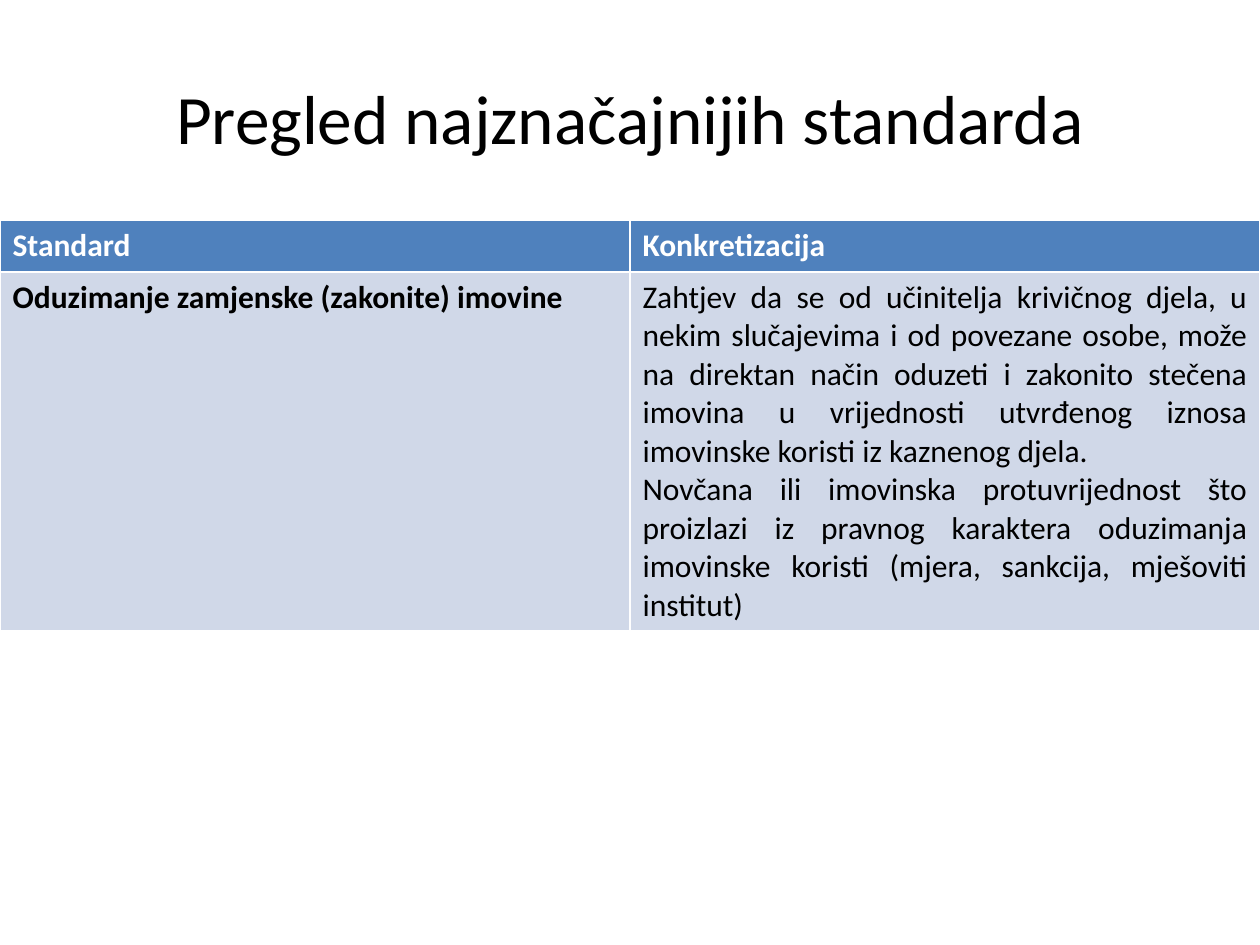
from pptx import Presentation
from pptx.dml.color import RGBColor
from pptx.enum.text import MSO_ANCHOR, PP_ALIGN
from pptx.util import Inches, Pt

FONT = "Calibri"
BLACK, WHITE = "000000", "FFFFFF"
HEADER_FILL, BODY_FILL = "4F81BD", "D0D8E8"

HEADERS = ["Standard", "Konkretizacija"]
STANDARD = "Oduzimanje zamjenske (zakonite) imovine"
DETAILS = [
    "Zahtjev da se od učinitelja krivičnog djela, u nekim slučajevima i od "
    "povezane osobe, može na direktan način oduzeti i zakonito stečena imovina "
    "u vrijednosti utvrđenog iznosa imovinske koristi iz kaznenog djela.",
    "Novčana ili imovinska protuvrijednost što proizlazi iz pravnog karaktera "
    "oduzimanja imovinske koristi (mjera, sankcija, mješoviti institut)",
]


def rgb(color):
    return RGBColor.from_string(color)


def write(tf, paragraphs, size, color, align, bold=False):
    for i, text in enumerate(paragraphs):
        p = tf.paragraphs[0] if i == 0 else tf.add_paragraph()
        p.alignment = align
        r = p.add_run()
        r.text = text
        r.font.name = FONT
        r.font.size = Pt(size)
        r.font.bold = bold
        r.font.color.rgb = rgb(color)


def add_title(s, left, top, width, height):
    sp = s.shapes.title
    sp.left, sp.top = Inches(left), Inches(top)
    sp.width, sp.height = Inches(width), Inches(height)
    tf = sp.text_frame
    tf.vertical_anchor = MSO_ANCHOR.MIDDLE
    write(tf, ["Pregled najznačajnijih standarda"], 39.6, BLACK, PP_ALIGN.CENTER)


def fill_cell(cell, paragraphs, fill, color, align=PP_ALIGN.LEFT, bold=True):
    cell.fill.solid()
    cell.fill.fore_color.rgb = rgb(fill)
    write(cell.text_frame, paragraphs, 18, color, align, bold)


def add_standards_table(s, left, top, width, height, header_height=0.41):
    table = s.shapes.add_table(
        2, len(HEADERS), Inches(left), Inches(top), Inches(width), Inches(height)
    ).table
    table.rows[0].height = Inches(header_height)
    table.rows[1].height = Inches(height - header_height)
    for col, header in enumerate(HEADERS):
        fill_cell(table.cell(0, col), [header], HEADER_FILL, WHITE)
    fill_cell(table.cell(1, 0), [STANDARD], BODY_FILL, BLACK)
    fill_cell(table.cell(1, 1), DETAILS, BODY_FILL, BLACK, PP_ALIGN.JUSTIFY, False)


def main():
    prs = Presentation()
    prs.slide_width, prs.slide_height = Inches(10), Inches(7.5)
    s = prs.slides.add_slide(prs.slide_layouts[5])
    s.background.fill.solid()
    s.background.fill.fore_color.rgb = rgb(WHITE)
    add_title(s, 0.5, 0.3, 9, 1.25)
    add_standards_table(s, 0, 1.75, 10, 3.21)
    prs.save("out.pptx")


if __name__ == "__main__":
    main()
